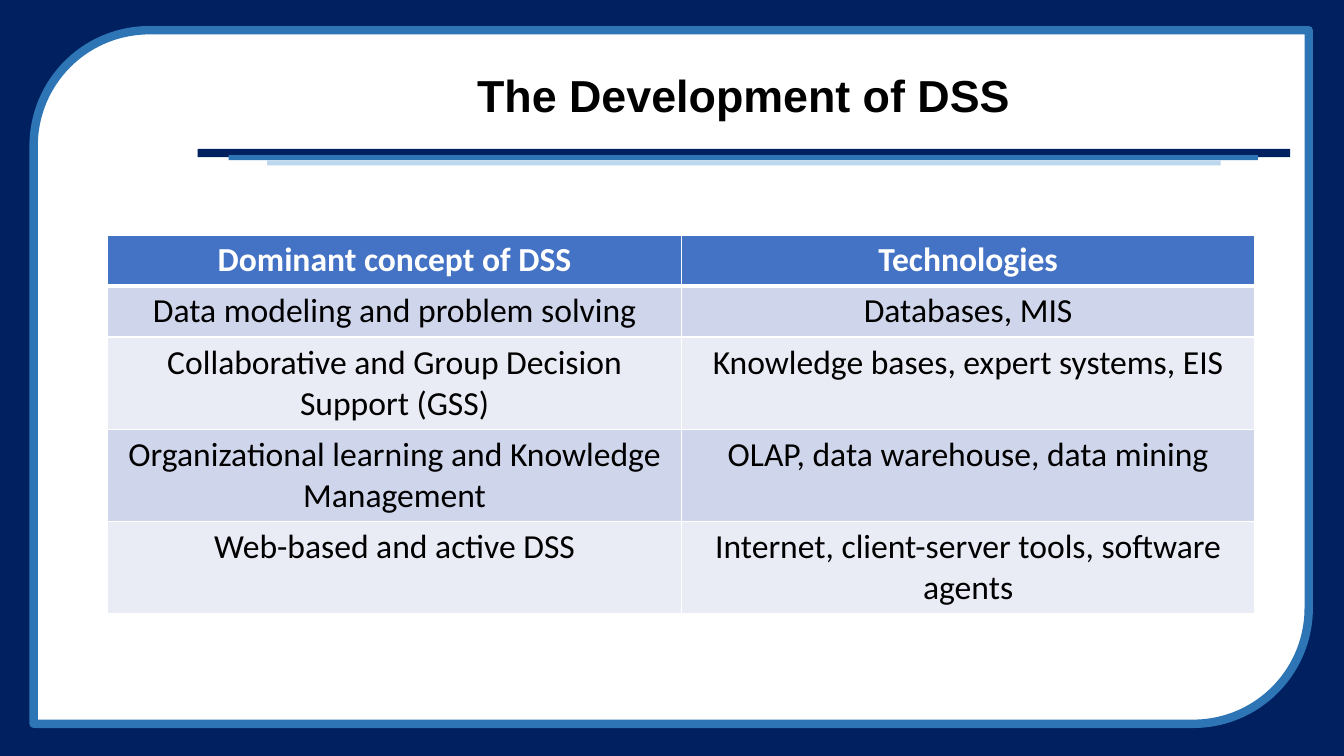
from lxml import etree
from pptx import Presentation, util as u
from pptx.dml.color import RGBColor
from pptx.enum import shapes, text
from pptx.oxml.ns import qn

NAVY, BLUE, PALE, WHITE, BLACK = "002060", "2E75B6", "BDD7EE", "FFFFFF", "000000"
HEADER, BANDS = "4472C4", ("CFD5EA", "E9EBF5")
ROWS = [
    ("Dominant concept of DSS", "Technologies"),
    ("Data modeling and problem solving", "Databases, MIS"),
    ("Collaborative and Group Decision Support (GSS)",
     "Knowledge bases, expert systems, EIS"),
    ("Organizational learning and Knowledge Management",
     "OLAP, data warehouse, data mining"),
    ("Web-based and active DSS", "Internet, client-server tools, software agents"),
]
ROW_HEIGHTS = (36.5, 36.5, 65.8, 65.8, 65.8)


def rgb(value):
    return RGBColor.from_string(value)


def add_panel(s, kind, box, fill, line=None, width=0):
    sp = s.shapes.add_shape(kind, *map(u.Pt, box))
    sp.shadow.inherit = False
    sp.fill.solid()
    sp.fill.fore_color.rgb = rgb(fill)
    if line:
        sp.line.color.rgb = rgb(line)
        sp.line.width = u.Pt(width)
    else:
        sp.line.fill.background()


def write(tf, content, font, size, color, bold):
    p = tf.paragraphs[0]
    p.alignment = text.PP_ALIGN.CENTER
    r = p.add_run()
    r.text = content
    r.font.name = font
    r.font.size = u.Pt(size)
    r.font.bold = bold
    r.font.color.rgb = rgb(color)
    return p


def add_title(s, content, box):
    tf = s.shapes.add_textbox(*map(u.Pt, box)).text_frame
    tf.word_wrap = True
    tf.vertical_anchor = text.MSO_ANCHOR.MIDDLE
    write(tf, content, "Arial", 32, BLACK, True).line_spacing = 0.9


def set_borders(cell, top, bottom):
    """Draw white cell edges; top and bottom are widths in points."""
    tc_pr = cell._tc.get_or_add_tcPr()
    edges = (("a:lnL", 1), ("a:lnR", 1), ("a:lnT", top), ("a:lnB", bottom))
    for i, (tag, width) in enumerate(edges):
        ln = etree.Element(qn(tag), w=str(u.Pt(width)))
        fill = etree.SubElement(ln, qn("a:solidFill"))
        etree.SubElement(fill, qn("a:srgbClr"), val=WHITE)
        tc_pr.insert(i, ln)


def add_concept_table(s, left, top, width):
    tbl = s.shapes.add_table(len(ROWS), len(ROWS[0]), u.Pt(left), u.Pt(top),
                             u.Pt(width), u.Pt(sum(ROW_HEIGHTS))).table
    for i, (row, height) in enumerate(zip(ROWS, ROW_HEIGHTS)):
        tbl.rows[i].height = u.Pt(height)
        head = i == 0
        for j, content in enumerate(row):
            cell = tbl.cell(i, j)
            cell.fill.solid()
            cell.fill.fore_color.rgb = rgb(HEADER if head else BANDS[(i - 1) % 2])
            set_borders(cell, 3 if i == 1 else 1, 3 if head else 1)
            write(cell.text_frame, content, "Calibri", 24,
                  WHITE if head else BLACK, head)


def main():
    prs = Presentation()
    prs.slide_width, prs.slide_height = u.Pt(960), u.Pt(540)
    s = prs.slides.add_slide(prs.slide_layouts[6])
    kinds = shapes.MSO_SHAPE
    add_panel(s, kinds.RECTANGLE, (0, 0, 960, 540), NAVY)
    add_panel(s, kinds.ROUND_2_DIAG_RECTANGLE, (24, 21.6, 910.8, 495.4),
              WHITE, BLUE, 6)
    for box, color in (((141.1, 106.4, 780.5, 5.8), NAVY),
                       ((163.4, 110.9, 735.1, 3.6), BLUE),
                       ((190.8, 114.5, 681.1, 3.6), PALE)):
        add_panel(s, kinds.RECTANGLE, box, color)
    add_title(s, "The Development of DSS", (141.1, 35.3, 780.5, 69.8))
    add_concept_table(s, 77, 167.8, 819.4)
    prs.save("out.pptx")


if __name__ == "__main__":
    main()
